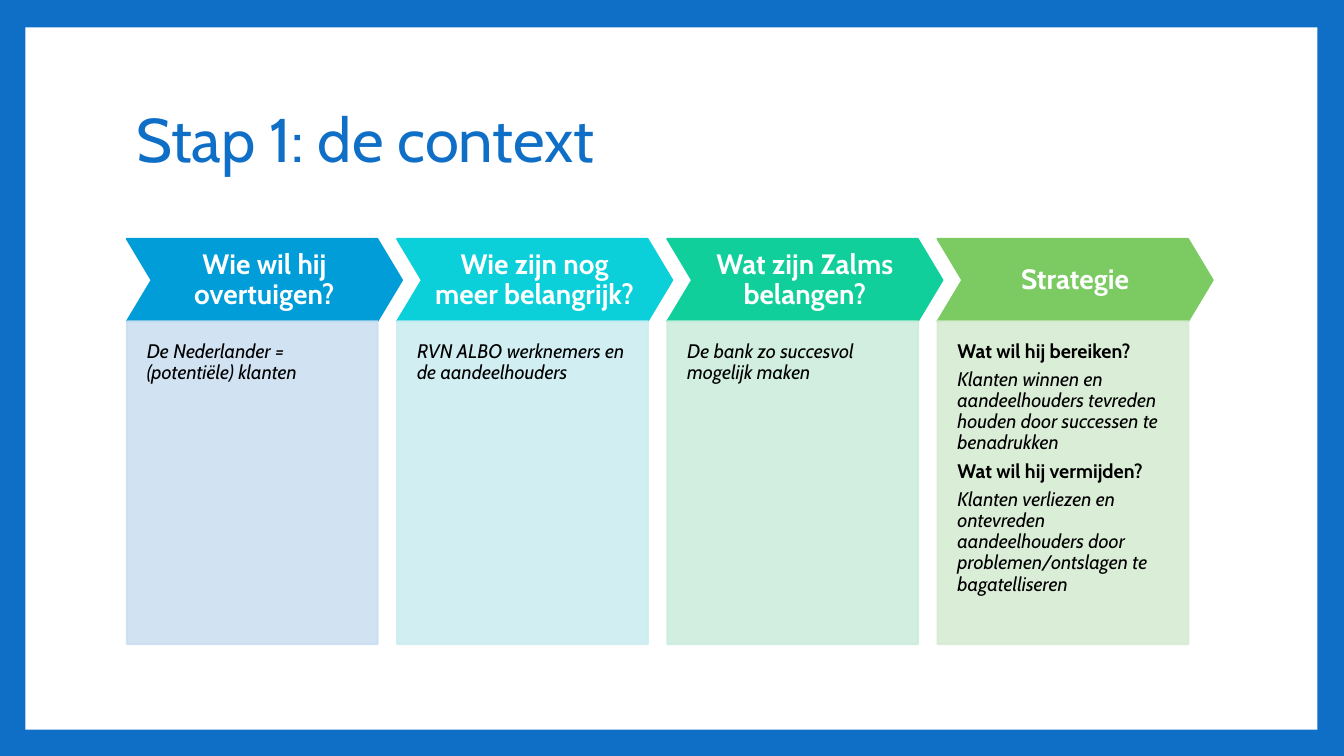
"""Build the slide 'Stap 1: de context' with four chevron-headed columns."""
from dataclasses import dataclass

import lxml.etree
import pptx
import pptx.dml.color
import pptx.enum.shapes
import pptx.enum.text
import pptx.oxml.ns
import pptx.util
from pptx.util import Cm, Pt

TITLE = "Stap 1: de context"
QUESTION, ANSWER = "question", "answer"
COLUMNS = [
    {"heading": "Wie wil hij overtuigen?", "accent": "009DD9", "tint": "CCDFF1",
     "lines": [(ANSWER, "De Nederlander = (potentiële) klanten")]},
    {"heading": "Wie zijn nog meer belangrijk?", "accent": "0BD0D9", "tint": "CCEEF1",
     "lines": [(ANSWER, "RVN ALBO werknemers en de aandeelhouders")]},
    {"heading": "Wat zijn Zalms belangen?", "accent": "10CF9B", "tint": "CCEDDE",
     "lines": [(ANSWER, "De bank zo succesvol mogelijk maken")]},
    {"heading": "Strategie", "accent": "7CCA62", "tint": "D7ECD3",
     "lines": [
         (QUESTION, "Wat wil hij bereiken?"),
         (ANSWER, "Klanten winnen en aandeelhouders tevreden houden "
                  "door successen te benadrukken"),
         (QUESTION, "Wat wil hij vermijden?"),
         (ANSWER, "Klanten verliezen en ontevreden aandeelhouders door "
                  "problemen/ontslagen te bagatelliseren")]},
]


@dataclass(frozen=True)
class Theme:
    """Colours, font and type sizes."""
    blue: str = "0F6FC6"
    white: str = "FFFFFF"
    black: str = "000000"
    font: str = "Cabin"
    title_size: int = 44
    heading_size: int = 20
    body_size: int = 14
    paragraph_gap: int = 5
    line_spacing: float = 0.9
    outline: float = 1.5
    tint_opacity: int = 90


THEME = Theme()
SHAPES = pptx.enum.shapes.MSO_SHAPE
ANCHORS = pptx.enum.text.MSO_ANCHOR
ALIGN = pptx.enum.text.PP_ALIGN

LEFT, PITCH = 3.2, 6.81
CHEVRON_TOP, CHEVRON_WIDTH, CHEVRON_HEIGHT = 6.02, 6.93, 2.08
BODY_WIDTH, BODY_HEIGHT = 6.32, 8.13


def rgb(code):
    """Return the colour for a hex code."""
    return pptx.dml.color.RGBColor.from_string(code)


def add_block(slide, preset, box, colour, outline=0):
    """Add a flat shape, its box given in centimetres."""
    block = slide.shapes.add_shape(preset, *map(Cm, box))
    block.shadow.inherit = False
    block.fill.solid()
    block.fill.fore_color.rgb = rgb(colour)
    if outline:
        block.line.color.rgb = rgb(colour)
        block.line.width = Pt(outline)
    else:
        block.line.fill.background()
    return block


def set_opacity(block, percent):
    """Make the fill and the outline of a shape partly transparent."""
    tag = pptx.oxml.ns.qn
    for colour in block.element.spPr.iter(tag("a:srgbClr")):
        lxml.etree.SubElement(colour, tag("a:alpha")).set("val", str(percent * 1000))


def set_frame(frame, anchor, insets):
    """Set the anchor and the left, top, right and bottom insets of a text frame."""
    frame.word_wrap = True
    frame.auto_size = pptx.enum.text.MSO_AUTO_SIZE.NONE
    frame.vertical_anchor = anchor
    (frame.margin_left, frame.margin_top,
     frame.margin_right, frame.margin_bottom) = map(Cm, insets)


def write(paragraph, text, size, colour, align=ALIGN.LEFT, bold=False, italic=False):
    """Fill and format one paragraph."""
    paragraph.text = text
    paragraph.alignment = align
    paragraph.line_spacing = THEME.line_spacing
    font = paragraph.font
    font.name, font.size, font.color.rgb = THEME.font, Pt(size), rgb(colour)
    font.bold, font.italic = bold, italic


def add_title(slide):
    """Place the title on its white panel."""
    title = slide.shapes.title
    title.left, title.top, title.width, title.height = map(Cm, (3.18, 1.7, 27.43, 3.76))
    set_frame(title.text_frame, ANCHORS.MIDDLE, (0.25, 0.13, 0.25, 0.13))
    write(title.text_frame.paragraphs[0], TITLE, THEME.title_size, THEME.blue)
    panel = add_block(slide, SHAPES.RECTANGLE, (0.64, 0.69, 32.56, 17.7), THEME.white)
    title.element.addprevious(panel.element)


def add_column(slide, left, column):
    """Add a chevron heading with its tinted body below."""
    chevron = add_block(slide, SHAPES.CHEVRON,
                        (left, CHEVRON_TOP, CHEVRON_WIDTH, CHEVRON_HEIGHT),
                        column["accent"], THEME.outline)
    chevron.adjustments[0] = 0.3
    set_frame(chevron.text_frame, ANCHORS.MIDDLE, (0.25, 0.25, 0.25, 0.25))
    write(chevron.text_frame.paragraphs[0], column["heading"], THEME.heading_size,
          THEME.white, ALIGN.CENTER, bold=True)

    body = add_block(slide, SHAPES.RECTANGLE,
                     (left, CHEVRON_TOP + CHEVRON_HEIGHT, BODY_WIDTH, BODY_HEIGHT),
                     column["tint"], THEME.outline)
    set_opacity(body, THEME.tint_opacity)
    frame = body.text_frame
    set_frame(frame, ANCHORS.TOP, (0.5, 0.5, 0.5, 1))
    for index, (role, text) in enumerate(column["lines"]):
        paragraph = frame.add_paragraph() if index else frame.paragraphs[0]
        write(paragraph, text, THEME.body_size, THEME.black,
              bold=role == QUESTION, italic=role == ANSWER)
        paragraph.space_after = Pt(THEME.paragraph_gap)


def main():
    """Build and save the presentation."""
    deck = pptx.Presentation()
    deck.slide_width, deck.slide_height = Cm(33.87), Cm(19.05)
    slide = deck.slides.add_slide(deck.slide_layouts.get_by_name("Title Only"))
    slide.background.fill.solid()
    slide.background.fill.fore_color.rgb = rgb(THEME.blue)
    add_title(slide)
    for index, column in enumerate(COLUMNS):
        add_column(slide, LEFT + index * PITCH, column)
    deck.save("out.pptx")


if __name__ == "__main__":
    main()
